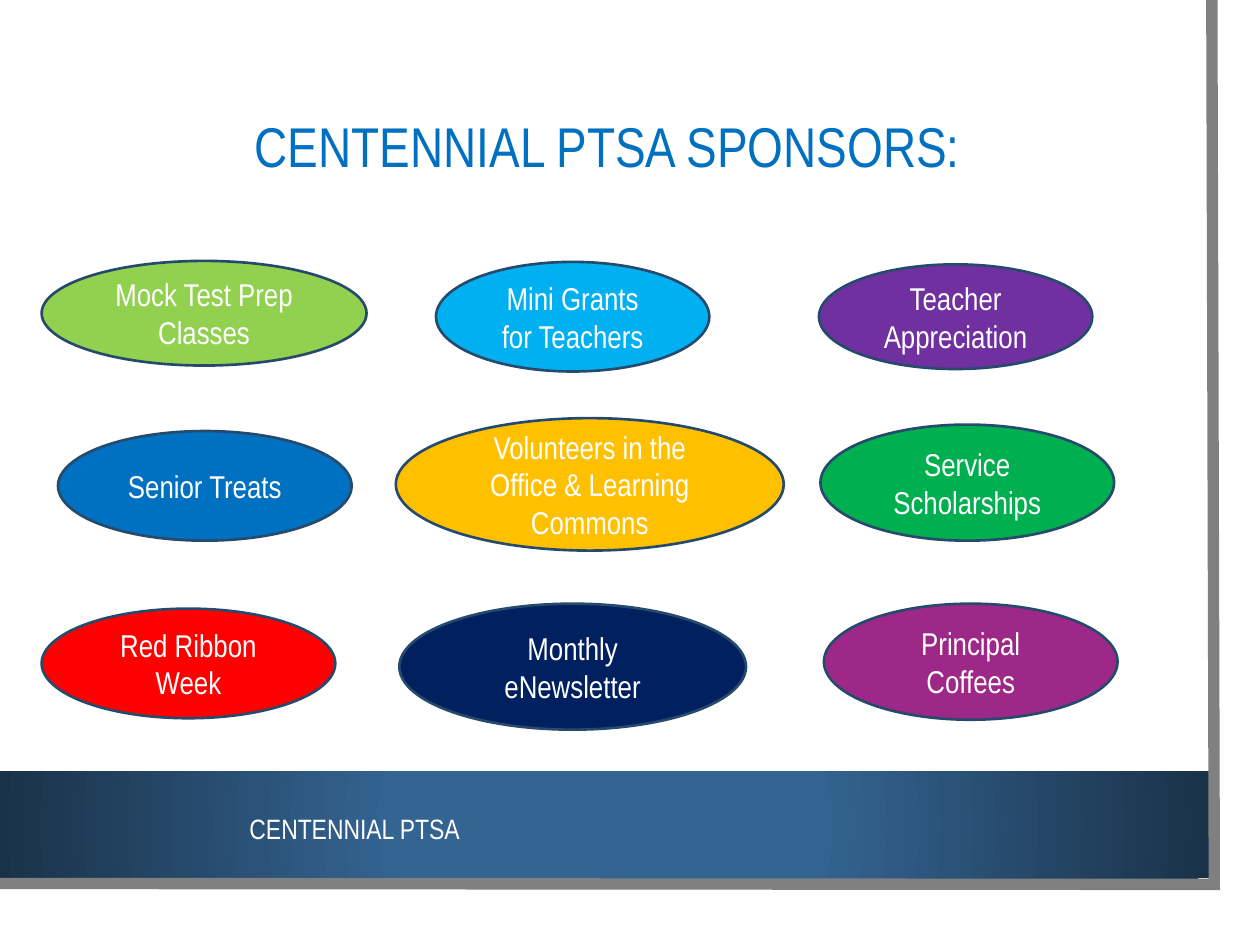
import pptx
import pptx.dml.color
import pptx.enum.shapes
import pptx.enum.text
import pptx.oxml
import pptx.oxml.ns
import pptx.util

Cm = pptx.util.Cm
Pt = pptx.util.Pt
SHAPES = pptx.enum.shapes.MSO_SHAPE
FONT = "Arial Narrow"

COLORS = {
    "white": "FFFFFF", "title": "0070C0", "frame": "808080", "outline": "264A6C",
    "band": "346492", "band edge": "1A3249",
    "lime": "92D050", "sky": "00B0F0", "purple": "7030A0",
    "blue": "0070C0", "gold": "FFC000", "green": "00B050",
    "red": "FF0000", "navy": "002060", "plum": "9E2888",
}

# Wording, colour, then left, top, width and height in cm within the region
SPONSORED = [
    ("Mock Test Prep Classes", "lime", (0, 0, 6.55, 2.11)),
    ("Mini Grants for Teachers", "sky", (7.95, 0.02, 5.51, 2.21)),
    ("Teacher Appreciation", "purple", (15.67, 0.07, 5.51, 2.11)),
    ("Senior Treats", "blue", (0.33, 3.43, 5.92, 2.21)),
    ("Volunteers in the Office & Learning Commons", "gold", (7.14, 3.17, 7.82, 2.67)),
    ("Service Scholarships", "green", (15.7, 3.3, 5.92, 2.34)),
    ("Red Ribbon Week", "red", (0, 7.01, 5.92, 2.21)),
    ("Monthly eNewsletter", "navy", (7.21, 6.91, 6.99, 2.54)),
    ("Principal Coffees", "plum", (15.77, 6.91, 5.92, 2.34)),
]


def rgb(name):
    return pptx.dml.color.RGBColor.from_string(COLORS[name])


def write_text(shape, text, size, color, line_spacing=None):
    """Put one centred paragraph in the middle of the shape."""
    frame = shape.text_frame
    frame.word_wrap = True
    frame.vertical_anchor = pptx.enum.text.MSO_ANCHOR.MIDDLE
    para = frame.paragraphs[0]
    para.alignment = pptx.enum.text.PP_ALIGN.CENTER
    para.line_spacing = line_spacing
    span = para.add_run()
    span.text = text
    span.font.name = FONT
    span.font.size = Pt(size)
    span.font.color.rgb = rgb(color)


def add_text(page, box, *style):
    shape = page.shapes.add_textbox(*map(Cm, box))
    write_text(shape, *style)


def fill_radial(shape, inner, outer):
    """Blend from the inner colour at the centre to the outer one at the edges."""
    gradient = pptx.oxml.parse_xml(
        f'<a:gradFill {pptx.oxml.ns.nsdecls("a")} rotWithShape="1"><a:gsLst>'
        f'<a:gs pos="34000"><a:srgbClr val="{COLORS[inner]}"/></a:gs>'
        f'<a:gs pos="100000"><a:srgbClr val="{COLORS[outer]}"/></a:gs></a:gsLst>'
        '<a:path path="circle"><a:fillToRect l="50000" t="50000" r="50000" b="50000"/>'
        '</a:path></a:gradFill>')
    shape.fill.background()
    no_fill = shape._element.spPr.find(pptx.oxml.ns.qn("a:noFill"))
    no_fill.getparent().replace(no_fill, gradient)


def add_footer(page, box):
    """Draw the band with its label."""
    left, top = box[:2]
    band = page.shapes.add_shape(SHAPES.RECTANGLE, *map(Cm, box))
    band.shadow.inherit = False
    band.line.fill.background()
    fill_radial(band, "band", "band edge")
    add_text(page, (left + 1.42, top + 0.44, 11.46, 1.4),
             "CENTENNIAL PTSA", 16, "white")


def add_frame(page, box):
    """Draw the grey edge down the right side and along the bottom."""
    left, top, width, height = box
    right, bottom = left + width, top + height
    builder = page.shapes.build_freeform(Cm(right - 0.05), Cm(top))
    builder.add_line_segments(
        [(Cm(right), Cm(bottom)), (Cm(left), Cm(bottom - 0.02))], close=False)
    edge = builder.convert_to_shape()
    edge.shadow.inherit = False
    edge.fill.background()
    edge.line.color.rgb = rgb("frame")
    edge.line.width = Pt(6.5)
    edge.line._get_or_add_ln().append(pptx.oxml.parse_xml(
        f'<a:miter {pptx.oxml.ns.nsdecls("a")} lim="800000"/>'))


def add_sponsored(page, box):
    left, top = box[:2]
    for text, color, (x, y, width, height) in SPONSORED:
        oval = page.shapes.add_shape(
            SHAPES.OVAL, Cm(left + x), Cm(top + y), Cm(width), Cm(height))
        oval.shadow.inherit = False
        oval.fill.solid()
        oval.fill.fore_color.rgb = rgb(color)
        oval.line.color.rgb = rgb("outline")
        oval.line.width = Pt(1.5)
        write_text(oval, text, 18, "white")


def main():
    deck = pptx.Presentation()
    deck.slide_width, deck.slide_height = Cm(25.4), Cm(19.05)
    page = deck.slides.add_slide(deck.slide_layouts[6])
    add_footer(page, (0, 15.55, 24.38, 2.16))
    add_frame(page, (-0.05, 0, 24.53, 17.83))
    add_text(page, (1.42, 1.9, 21.67, 2.21),
             "CENTENNIAL PTSA SPONSORS:", 32, "title", 0.9)
    add_sponsored(page, (0.84, 5.26, 21.69, 9.45))
    deck.save("out.pptx")


if __name__ == "__main__":
    main()
